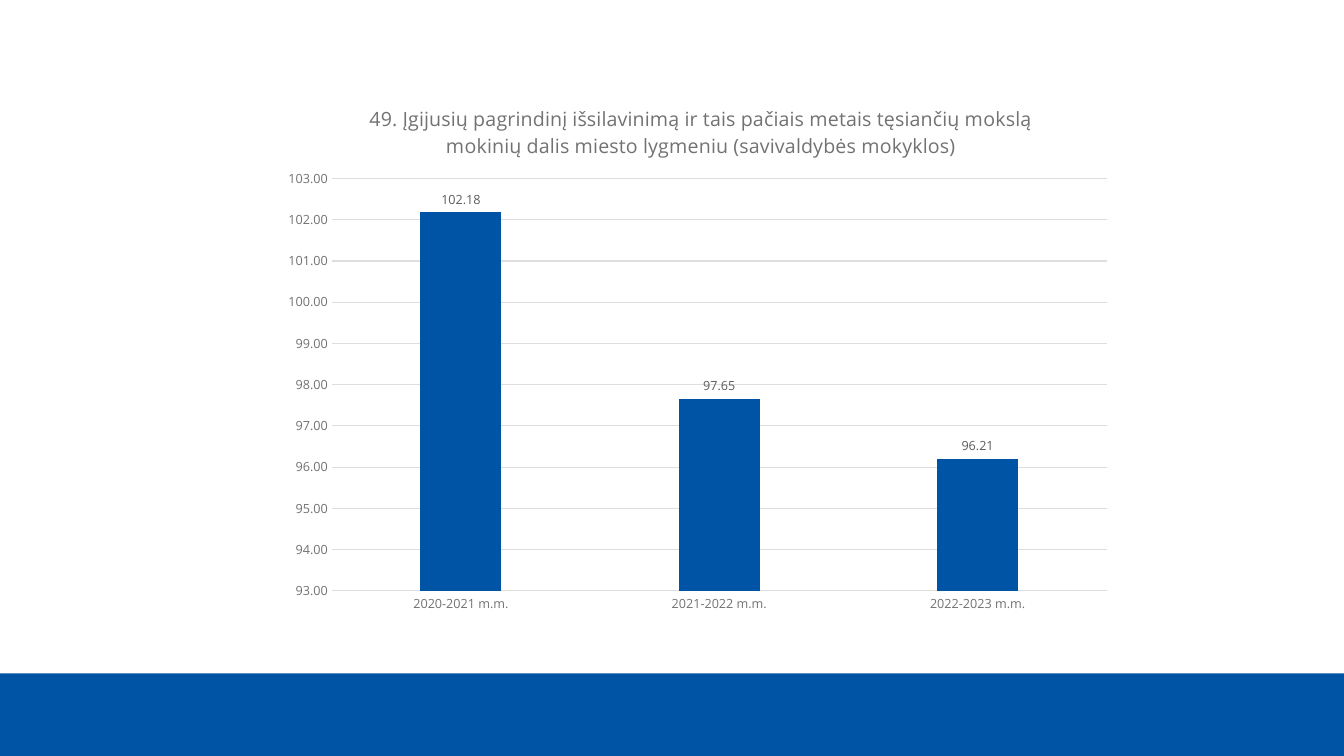
from lxml.etree import SubElement
from pptx import Presentation
from pptx.chart.data import CategoryChartData
from pptx.dml.color import RGBColor
from pptx.enum.chart import XL_CHART_TYPE, XL_LABEL_POSITION, XL_TICK_MARK
from pptx.enum.shapes import MSO_SHAPE
from pptx.oxml.ns import qn
from pptx.util import Pt

TITLE = ("49. Įgijusių pagrindinį išsilavinimą ir tais pačiais metais tęsiančių mokslą "
         "mokinių dalis miesto lygmeniu (savivaldybės mokyklos)")
SHARES = {"2020-2021 m.m.": 102.18, "2021-2022 m.m.": 97.65, "2022-2023 m.m.": 96.21}
COLORS = {"blue": "0054A5", "grid": "DEDEDE", "axis": "727272", "label": "5C5C5C",
          "text": "262626"}
FONT = "Open Sans"
NUMBER_FORMAT = "0.00"
PAGE_WIDTH, PAGE_HEIGHT = Pt(960), Pt(540)
BAND_HEIGHT = Pt(59)
TITLE_PLACE = {"x": 0.11, "y": 0.04}
PLOT_PLACE = {"x": 0.07, "y": 0.185, "w": 0.91, "h": 0.755}


def color(name):
    return RGBColor.from_string(COLORS[name])


def style_font(font, size, name):
    font.name = FONT
    font.size = Pt(size)
    font.bold = False
    font.color.rgb = color(name)


def style_line(line):
    line.color.rgb = color("grid")
    line.width = Pt(0.75)


def place(part, index, fractions, inner=False):
    """Fix a chart part at fractions of the chart; its layout is child number index."""
    for old in part.findall(qn("c:layout")):
        part.remove(old)
    layout = SubElement(part, qn("c:layout"))
    part.insert(index, layout)
    manual = SubElement(layout, qn("c:manualLayout"))
    if inner:
        SubElement(manual, qn("c:layoutTarget")).set("val", "inner")
    for side in ("x", "y"):
        SubElement(manual, qn(f"c:{side}Mode")).set("val", "edge")
    for key, fraction in fractions.items():
        SubElement(manual, qn(f"c:{key}")).set("val", str(fraction))


def add_band(page):
    band = page.shapes.add_shape(MSO_SHAPE.RECTANGLE, 0, PAGE_HEIGHT - BAND_HEIGHT,
                                 PAGE_WIDTH, BAND_HEIGHT)
    band.shadow.inherit = False
    band.fill.solid()
    band.fill.fore_color.rgb = color("blue")
    band.line.fill.background()


def add_share_chart(page):
    data = CategoryChartData(number_format=NUMBER_FORMAT)
    data.categories = list(SHARES)
    data.add_series("Series 1", list(SHARES.values()))
    chart = page.shapes.add_chart(XL_CHART_TYPE.COLUMN_CLUSTERED, Pt(194.4), Pt(55.4),
                                  Pt(608.4), Pt(390.2), data).chart
    style_font(chart.font, 10, "text")
    chart.has_legend = False

    chart.has_title = True
    heading = chart.chart_title.text_frame
    heading.text = TITLE
    style_font(heading.paragraphs[0].runs[0].font, 14, "axis")

    plot = chart.plots[0]
    plot.vary_by_categories = False
    plot.gap_width = 219
    plot.overlap = -27
    bars = plot.series[0].format.fill
    bars.solid()
    bars.fore_color.rgb = color("blue")

    plot.has_data_labels = True
    labels = plot.data_labels
    labels.show_value = True
    labels.position = XL_LABEL_POSITION.OUTSIDE_END
    labels.number_format = NUMBER_FORMAT
    labels.number_format_is_linked = False
    style_font(labels.font, 9, "label")

    years, values = chart.category_axis, chart.value_axis
    for axis in (years, values):
        axis.major_tick_mark = axis.minor_tick_mark = XL_TICK_MARK.NONE
        style_font(axis.tick_labels.font, 9, "axis")
    style_line(years.format.line)
    values.minimum_scale, values.maximum_scale, values.major_unit = 93, 103, 1
    values.tick_labels.number_format = NUMBER_FORMAT
    values.tick_labels.number_format_is_linked = False
    values.format.line.fill.background()
    style_line(values.major_gridlines.format.line)

    chart_space = chart.element
    place(chart_space.find(".//" + qn("c:title")), 1, TITLE_PLACE)
    place(chart_space.find(".//" + qn("c:plotArea")), 0, PLOT_PLACE, inner=True)


def main():
    deck = Presentation()
    deck.slide_width, deck.slide_height = PAGE_WIDTH, PAGE_HEIGHT
    page = deck.slides.add_slide(deck.slide_layouts[6])
    add_band(page)
    add_share_chart(page)
    deck.save("out.pptx")


if __name__ == "__main__":
    main()
